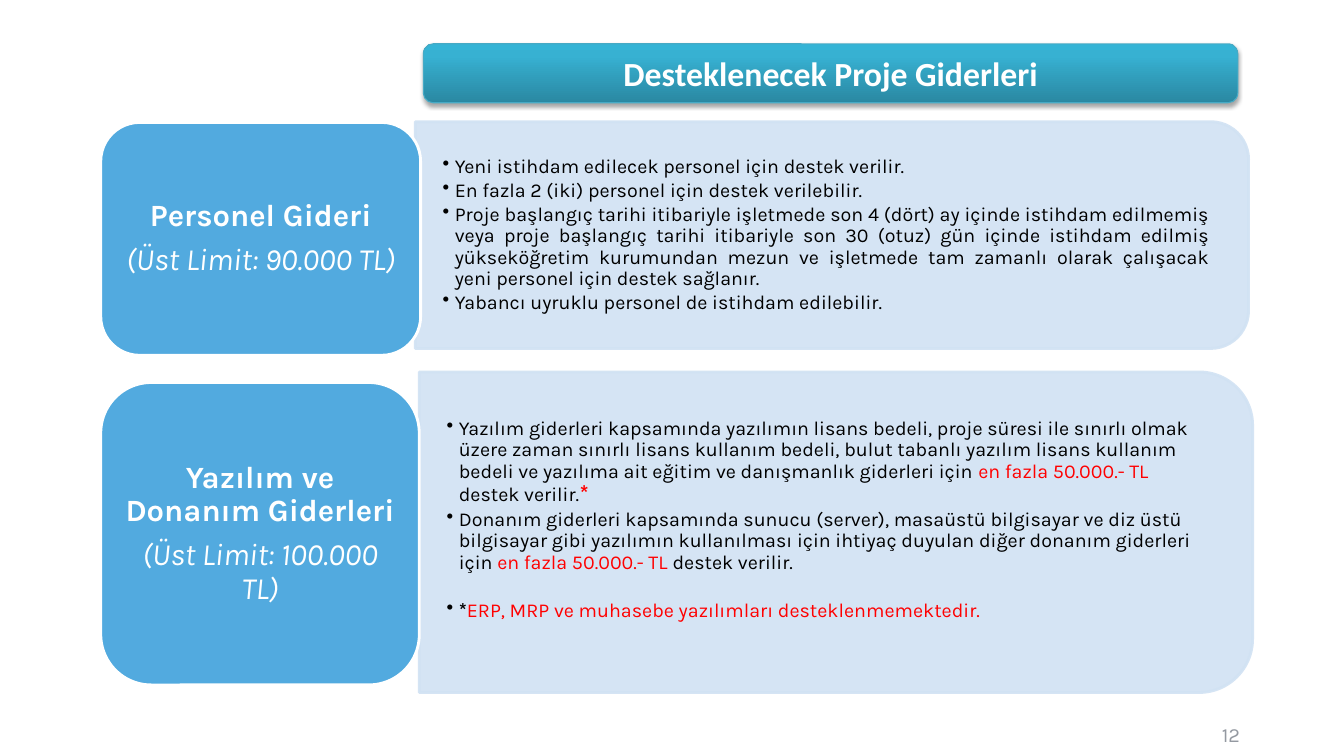
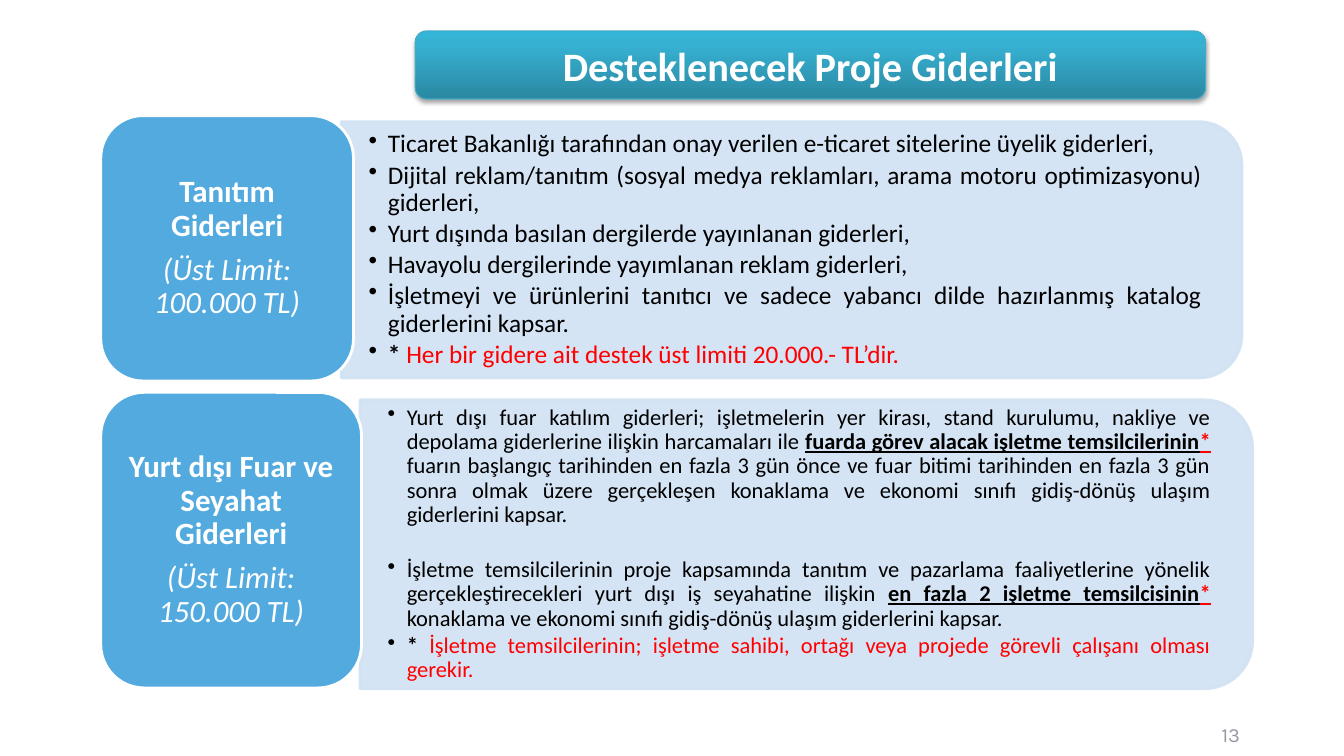
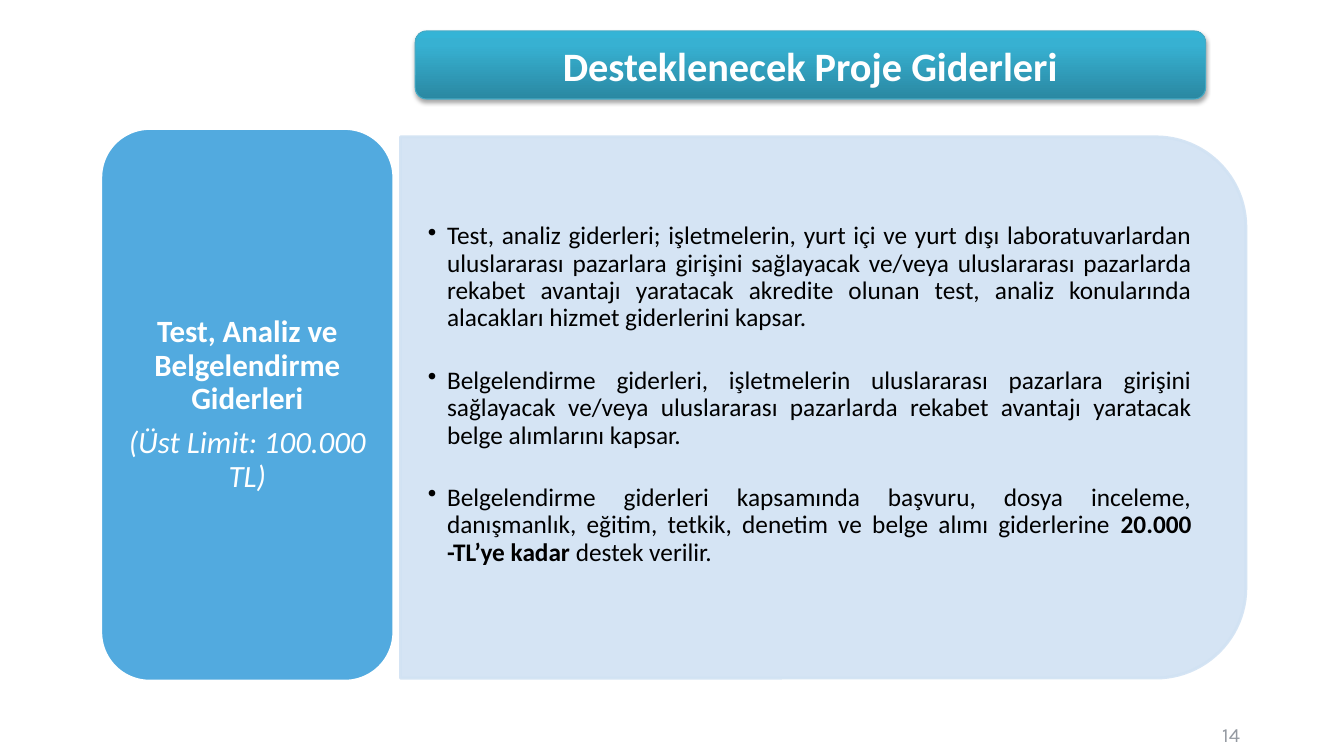
from lxml import etree
from pptx import Presentation, util as u
from pptx.dml.color import RGBColor
from pptx.enum import shapes, text
from pptx.oxml import parse_xml
from pptx.oxml.ns import nsdecls, qn

WIDTH, HEIGHT = 13.28, 7.47
COLOURS = {
    "label": "52AADF", "panel": "D1E2F3", "white": "FFFFFF", "black": "000000",
    "red": "FF0000", "number": "9499A1", "title_line": "46AAC5",
    "title_low": "2A88A2", "title_mid": "37B1D2", "title_high": "34B4D6",
}
HEADING = "Desteklenecek Proje Giderleri"
LABEL_LEFT = 7.5           # per cent of the slide's width
CORNER_INSET = 0.05        # share of the short side taken by a round corner
ALIGN = text.PP_ALIGN

# Run formats used inside the bullets
FORMATS = {
    "plain": {},
    "bold": {"bold": True},
    "red": {"colour": "red"},
    "star": {"bold": True, "colour": "red", "size": 16},
    "key": {"bold": True, "underline": True},
    "key_star": {"bold": True, "underline": True, "colour": "red"},
}

# Title boxes: left, top, width, height in per cent, then text size
TITLE_SMALL = ((31.5, 5.8, 60.6, 7.8), 24)
TITLE_LARGE = ((30.9, 4.1, 58.8, 9), 28.7)

# Each row: a label (top, width, height) beside a panel, in per cent.
# "wide_after" holds the bullets followed by a wide gap of "gap" points.
SLIDES = [
    {"number": "12", "title": TITLE_SMALL, "rows": [
        {"label": (16.2, 23.8, 30.8), "panel": (30.9, 16.1, 62, 30),
         "font": "Karla", "size": 14, "indent": 0.12,
         "name": "Personel Gideri", "limit": "(Üst Limit: 90.000 TL)",
         "bullets": [
             "Yeni istihdam edilecek personel için destek verilir.",
             "En fazla 2 (iki) personel için destek verilebilir.",
             "Proje başlangıç tarihi itibariyle işletmede son 4 (dört) ay içinde istihdam "
             "edilmemiş veya proje başlangıç tarihi itibariyle son 30 (otuz) gün içinde "
             "istihdam edilmiş yükseköğretim kurumundan mezun ve işletmede tam zamanlı "
             "olarak çalışacak yeni personel için destek sağlanır.",
             "Yabancı uyruklu personel de istihdam edilebilir."]},
        {"label": (50.6, 23.7, 40), "panel": (31.2, 49.2, 62, 42.4),
         "font": "Karla", "size": 14, "indent": 0.12, "align": ALIGN.LEFT,
         "wide_after": [1], "gap": 19, "lift": 0.24,
         "name": "Yazılım ve Donanım Giderleri", "limit": "(Üst Limit: 100.000 TL)",
         "bullets": [
             [("Yazılım giderleri kapsamında yazılımın lisans bedeli, proje süresi ile "
               "sınırlı olmak üzere zaman sınırlı lisans kullanım bedeli, bulut tabanlı "
               "yazılım lisans kullanım bedeli ve yazılıma ait eğitim ve danışmanlık "
               "giderleri için ", "plain"),
              ("en fazla 50.000.- TL", "red"), (" destek verilir.", "plain"), ("*", "star")],
             [("Donanım giderleri kapsamında sunucu (server), masaüstü bilgisayar ve diz "
               "üstü bilgisayar gibi yazılımın kullanılması için ihtiyaç duyulan diğer "
               "donanım giderleri için ", "plain"),
              ("en fazla 50.000.- TL ", "red"), ("destek verilir.", "plain")],
             [("*", "bold"),
              ("ERP, MRP ve muhasebe yazılımları desteklenmemektedir.", "red")]]},
    ]},
    {"number": "13", "title": TITLE_LARGE, "rows": [
        {"label": (15.3, 18.8, 35.1), "panel": (25.4, 16.1, 67, 33.9),
         "font": "Calibri", "size": 18, "indent": 0.19,
         "name": "Tanıtım Giderleri", "limit": "(Üst Limit: 100.000 TL)",
         "bullets": [
             "Ticaret Bakanlığı tarafından onay verilen e-ticaret sitelerine üyelik giderleri,",
             "Dijital reklam/tanıtım (sosyal medya reklamları, arama motoru optimizasyonu) "
             "giderleri,",
             "Yurt dışında basılan dergilerde yayınlanan giderleri,",
             "Havayolu dergilerinde yayımlanan reklam giderleri,",
             "İşletmeyi ve ürünlerini tanıtıcı ve sadece yabancı dilde hazırlanmış katalog "
             "giderlerini kapsar.",
             [("* ", "bold"),
              ("Her bir gidere ait destek üst limiti 20.000.- TL’dir.", "red")]]},
        {"label": (51.9, 19.4, 39.1), "panel": (26.8, 52.9, 66.4, 38.2),
         "font": "Calibri", "size": 16, "indent": 0.19, "wide_after": [0], "gap": 22,
         "name": "Yurt dışı Fuar ve Seyahat Giderleri", "limit": "(Üst Limit: 150.000 TL)",
         "bullets": [
             [("Yurt dışı fuar katılım giderleri; işletmelerin yer kirası, stand kurulumu, "
               "nakliye ve depolama giderlerine ilişkin harcamaları ile ", "plain"),
              ("fuarda görev alacak işletme temsilcilerinin", "key"), ("*", "key_star"),
              (" fuarın başlangıç tarihinden en fazla 3 gün önce ve fuar bitimi tarihinden "
               "en fazla 3 gün sonra olmak üzere gerçekleşen konaklama ve ekonomi sınıfı "
               "gidiş-dönüş ulaşım giderlerini kapsar.", "plain")],
             [("İşletme temsilcilerinin proje kapsamında tanıtım ve pazarlama faaliyetlerine "
               "yönelik gerçekleştirecekleri yurt dışı iş seyahatine ilişkin ", "plain"),
              ("en fazla 2 işletme temsilcisinin", "key"), ("*", "key_star"),
              (" konaklama ve ekonomi sınıfı gidiş-dönüş ulaşım giderlerini kapsar.", "plain")],
             [("* ", "bold"),
              ("İşletme temsilcilerinin; işletme sahibi, ortağı veya projede görevli "
               "çalışanı olması gerekir.", "red")]]},
    ]},
    {"number": "14", "title": TITLE_LARGE, "rows": [
        {"label": (17, 21.8, 73.1), "panel": (29.8, 18.1, 62.9, 71.6),
         "font": "Calibri", "size": 18, "indent": 0.19,
         "wide_after": [0, 1], "gap": 25, "lift": 0.25,
         "name": "Test, Analiz ve Belgelendirme Giderleri",
         "limit": "(Üst Limit: 100.000 TL)",
         "bullets": [
             "Test, analiz giderleri; işletmelerin, yurt içi ve yurt dışı laboratuvarlardan "
             "uluslararası pazarlara girişini sağlayacak ve/veya uluslararası pazarlarda "
             "rekabet avantajı yaratacak akredite olunan test, analiz konularında alacakları "
             "hizmet giderlerini kapsar.",
             "Belgelendirme giderleri, işletmelerin uluslararası pazarlara girişini "
             "sağlayacak ve/veya uluslararası pazarlarda rekabet avantajı yaratacak belge "
             "alımlarını kapsar.",
             [("Belgelendirme giderleri kapsamında başvuru, dosya inceleme, danışmanlık, "
               "eğitim, tetkik, denetim ve belge alımı giderlerine ", "plain"),
              ("20.000 -TL’ye kadar ", "bold"), ("destek verilir.", "plain")]]},
    ]},
]


# Helpers
def inches(left, top, width, height):
    """Turn shares of the slide (per cent) into inches."""
    return (left * WIDTH / 100, top * HEIGHT / 100,
            width * WIDTH / 100, height * HEIGHT / 100)


def emu(box):
    return [u.Inches(length) for length in box]


def rgb(name):
    return RGBColor.from_string(COLOURS[name])


def set_frame(frame, left, top, right, bottom):
    values = {"word_wrap": True, "vertical_anchor": text.MSO_ANCHOR.MIDDLE,
              "margin_left": u.Inches(left), "margin_top": u.Inches(top),
              "margin_right": u.Inches(right), "margin_bottom": u.Inches(bottom)}
    for key, value in values.items():
        setattr(frame, key, value)


def add_run(paragraph, words, font, size, colour, **extra):
    run = paragraph.add_run()
    run.text = words
    for key, value in {"name": font, "size": u.Pt(size), **extra}.items():
        setattr(run.font, key, value)
    run.font.color.rgb = rgb(colour)


def next_paragraph(frame, index, **values):
    paragraph = frame.add_paragraph() if index else frame.paragraphs[0]
    for key, value in values.items():
        setattr(paragraph, key, value)
    return paragraph


def add_block(slide, kind, box, fill, line, line_width):
    block = slide.shapes.add_shape(kind, *emu(box))
    block.shadow.inherit = False
    block.fill.solid()
    block.fill.fore_color.rgb = rgb(fill)
    block.line.color.rgb = rgb(line)
    block.line.width = u.Pt(line_width)
    return block


# Elements shared by the slides
def add_number(slide, number):
    corner = slide.shapes.add_textbox(*emu(inches(69.7, 94.5, 23.3, 5.4)))
    set_frame(corner.text_frame, 0.1, 0.05, 0.1, 0.05)
    paragraph = next_paragraph(corner.text_frame, 0, alignment=ALIGN.RIGHT)
    add_run(paragraph, number, "Karla", 14.3, "number")


def add_title(slide, shares, size):
    band = add_block(slide, shapes.MSO_SHAPE.ROUNDED_RECTANGLE, inches(*shares),
                     "title_mid", "title_line", 0.75)
    stops = "".join(
        f'<a:gs pos="{place * 1000}"><a:srgbClr val="{COLOURS[name]}"/></a:gs>'
        for place, name in ((0, "title_low"), (80, "title_mid"), (100, "title_high")))
    gradient = parse_xml(f'<a:gradFill {nsdecls("a")} rotWithShape="1"><a:gsLst>{stops}'
                         '</a:gsLst><a:lin ang="16200000" scaled="0"/></a:gradFill>')
    properties = band._element.spPr
    properties.replace(properties.find(qn("a:solidFill")), gradient)
    properties.find(qn("a:effectLst")).append(parse_xml(
        f'<a:outerShdw {nsdecls("a")} blurRad="{u.Pt(3.1)}" dist="{u.Pt(1.8)}" '
        f'dir="5400000" rotWithShape="0"><a:srgbClr val="{COLOURS["black"]}">'
        '<a:alpha val="35000"/></a:srgbClr></a:outerShdw>'))
    set_frame(band.text_frame, 0.12, 0.06, 0.12, 0.06)
    paragraph = next_paragraph(band.text_frame, 0, alignment=ALIGN.CENTER)
    add_run(paragraph, HEADING, "Calibri", size, "white", bold=True)


def add_panel(slide, box):
    """Panel rounded on its right side: a top-rounded shape turned by 90 degrees."""
    left, top, width, height = box
    turned = (left + (width - height) / 2, top + (height - width) / 2, height, width)
    panel = add_block(slide, shapes.MSO_SHAPE.ROUND_2_SAME_RECTANGLE, turned,
                      "panel", "panel", 2)
    panel.rotation = 90
    for colour in panel._element.spPr.iter(qn("a:srgbClr")):
        etree.SubElement(colour, qn("a:alpha")).set("val", "90000")


def add_bullets(slide, box, row):
    left, top, width, height = box
    inset = CORNER_INSET * min(width, height)
    area = slide.shapes.add_textbox(
        *emu((left, top + inset, width - inset, height - 2 * inset)))
    frame = area.text_frame
    set_frame(frame, 0.27, 0.14, 0.27, 0.14 + row.get("lift", 0))
    for index, bullet in enumerate(row["bullets"]):
        wide = index in row.get("wide_after", [])
        paragraph = next_paragraph(
            frame, index, alignment=row.get("align", ALIGN.JUSTIFY), line_spacing=0.9,
            space_after=u.Pt(row["gap"] if wide else 0.15 * row["size"]))
        properties = paragraph._p.get_or_add_pPr()
        properties.set("marL", str(u.Inches(row["indent"])))
        properties.set("indent", str(-u.Inches(row["indent"])))
        etree.SubElement(properties, qn("a:buChar")).set("char", "•")
        runs = [(bullet, "plain")] if isinstance(bullet, str) else bullet
        for words, style in runs:
            base = {"font": row["font"], "size": row["size"], "colour": "black"}
            add_run(paragraph, words, **{**base, **FORMATS[style]})


def add_label(slide, row):
    top, width, height = row["label"]
    label = add_block(slide, shapes.MSO_SHAPE.ROUNDED_RECTANGLE,
                      inches(LABEL_LEFT, top, width, height), "label", "white", 2)
    set_frame(label.text_frame, 0.09, 0.05, 0.09, 0.05)
    lines = ((row["name"], {"bold": True}), (row["limit"], {"italic": True}))
    for index, (words, style) in enumerate(lines):
        paragraph = next_paragraph(label.text_frame, index, alignment=ALIGN.CENTER,
                                   line_spacing=0.9, space_after=u.Pt(7.7))
        add_run(paragraph, words, row["font"], 22, "white", **style)


def main():
    deck = Presentation()
    deck.slide_width, deck.slide_height = u.Inches(WIDTH), u.Inches(HEIGHT)
    for content in SLIDES:
        slide = deck.slides.add_slide(deck.slide_layouts[6])
        add_number(slide, content["number"])
        add_title(slide, *content["title"])
        for row in content["rows"]:
            box = inches(*row["panel"])
            add_panel(slide, box)
            add_bullets(slide, box, row)
            add_label(slide, row)
    deck.save("out.pptx")


if __name__ == "__main__":
    main()
